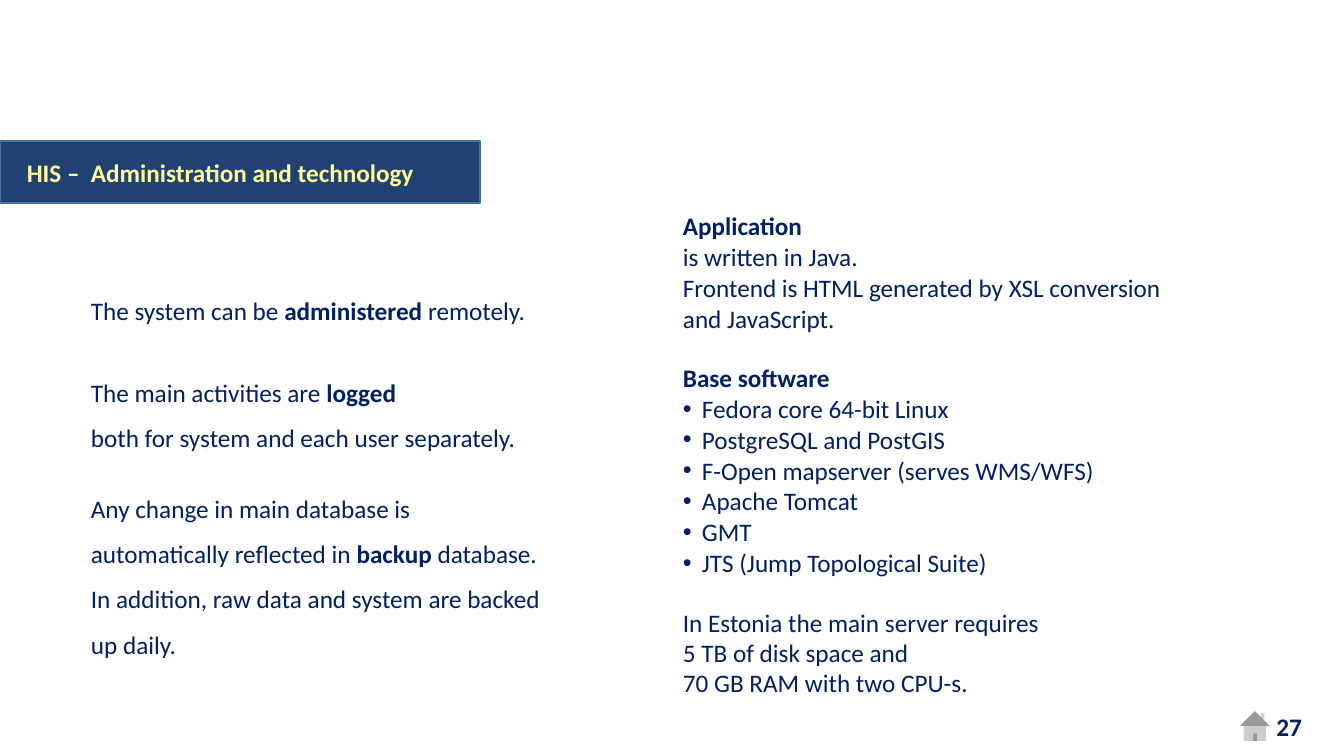
from lxml.etree import SubElement
from pptx import Presentation
from pptx.dml.color import RGBColor
from pptx.enum.shapes import MSO_SHAPE as Shape
from pptx.enum.text import MSO_ANCHOR as Anchor, PP_ALIGN as Align
from pptx.oxml.ns import qn
from pptx.util import Emu, Pt

PX = 12192000 / 1344
NAVY, BAR_BLUE, BAR_EDGE = "002060", "214172", "43739E"
PALE_YELLOW, WHITE = "FFFF99", "FFFFFF"


def px(length):
    return Emu(round(length * PX))


def color(hex_code):
    return RGBColor.from_string(hex_code)


def block(slide, kind, box, fill, edge=None):
    shape = slide.shapes.add_shape(kind, *map(px, box))
    shape.shadow.inherit = False
    shape.fill.solid()
    shape.fill.fore_color.rgb = color(fill)
    if edge:
        shape.line.color.rgb = color(edge)
        shape.line.width = Pt(1)
    else:
        shape.line.fill.background()
    return shape


def add_bullet(paragraph, indent=19):
    props = paragraph._p.get_or_add_pPr()
    props.set("marL", str(px(indent)))
    props.set("indent", str(-px(indent)))
    SubElement(props, qn("a:buFont"), typeface="Arial")
    SubElement(props, qn("a:buChar"), char="•")


def write(slide, box, *paragraphs, ink=NAVY, spacing=None, before=0, after=0,
          align=Align.LEFT, anchor=Anchor.TOP):
    """Asterisks enclose bold words, a leading bullet makes a list item."""
    frame = slide.shapes.add_textbox(*map(px, box)).text_frame
    frame.word_wrap = True
    frame.vertical_anchor = anchor
    for number, content in enumerate(paragraphs):
        paragraph = frame.add_paragraph() if number else frame.paragraphs[0]
        paragraph.alignment = align
        paragraph.line_spacing = spacing
        if number:
            paragraph.space_before = Pt(before)
        if number < len(paragraphs) - 1:
            paragraph.space_after = Pt(after)
        if content.startswith("•"):
            add_bullet(paragraph)
            content = content[1:]
        for part, words in enumerate(content.split("*")):
            for row, line in enumerate(words.split("\n")):
                if row:
                    paragraph.add_line_break()
                if line:
                    run = paragraph.add_run()
                    run.text = line
                    run.font.bold = part % 2 == 1
        paragraph.font.size = Pt(18)
        for run in paragraph.runs:
            run.font.name = "Calibri"
            run.font.size = Pt(18)
            run.font.color.rgb = color(ink)


def title_bar(slide, left, top, width, height):
    block(slide, Shape.RECTANGLE, (left, top, width, height), BAR_BLUE, BAR_EDGE)
    write(slide, (left + 17, top + 11, width - 43, 40),
          "*HIS –  Administration and technology*", ink=PALE_YELLOW)


def administration(slide, left, top, width):
    write(slide, (left, top, width + 13, 41),
          "The system can be *administered* remotely.", spacing=Pt(21.6))
    write(slide, (left, top + 67, width, 310),
          "The main activities are *logged*\nboth for system and each user separately.",
          "Any change in main database is automatically reflected in *backup* database.\n"
          "In addition, raw data and system are backed up daily.",
          spacing=1.5, before=6, after=12)


def technology(slide, left, top, width):
    write(slide, (left, top, width, 135),
          "*Application*", "is written in Java.",
          "Frontend is HTML generated by XSL conversion\nand JavaScript.",
          spacing=Pt(22))
    write(slide, (left, top + 152, width, 228),
          "*Base software*", "•Fedora core 64-bit Linux", "•PostgreSQL and PostGIS",
          "•F-Open mapserver (serves WMS/WFS)", "•Apache Tomcat", "•GMT",
          "•JTS (Jump Topological Suite)", spacing=Pt(22))
    write(slide, (left, top + 397, width, 104),
          "In Estonia the main server requires\n5 TB of disk space and\n"
          "70 GB RAM with two CPU-s.", spacing=Pt(21.6))


def page_corner(slide, left, top):
    block(slide, Shape.ACTION_BUTTON_HOME, (left, top, 40, 40), WHITE)
    write(slide, (left + 5, top + 3, 72, 34), "*27*",
          align=Align.RIGHT, anchor=Anchor.MIDDLE)


def main():
    deck = Presentation()
    deck.slide_width, deck.slide_height = px(1344), px(756)
    slide = deck.slides.add_slide(deck.slide_layouts[6])
    title_bar(slide, 0, 141, 480, 62)
    administration(slide, 81, 290, 473)
    technology(slide, 673, 205, 508)
    page_corner(slide, 1235, 706)
    deck.save("out.pptx")


if __name__ == "__main__":
    main()
